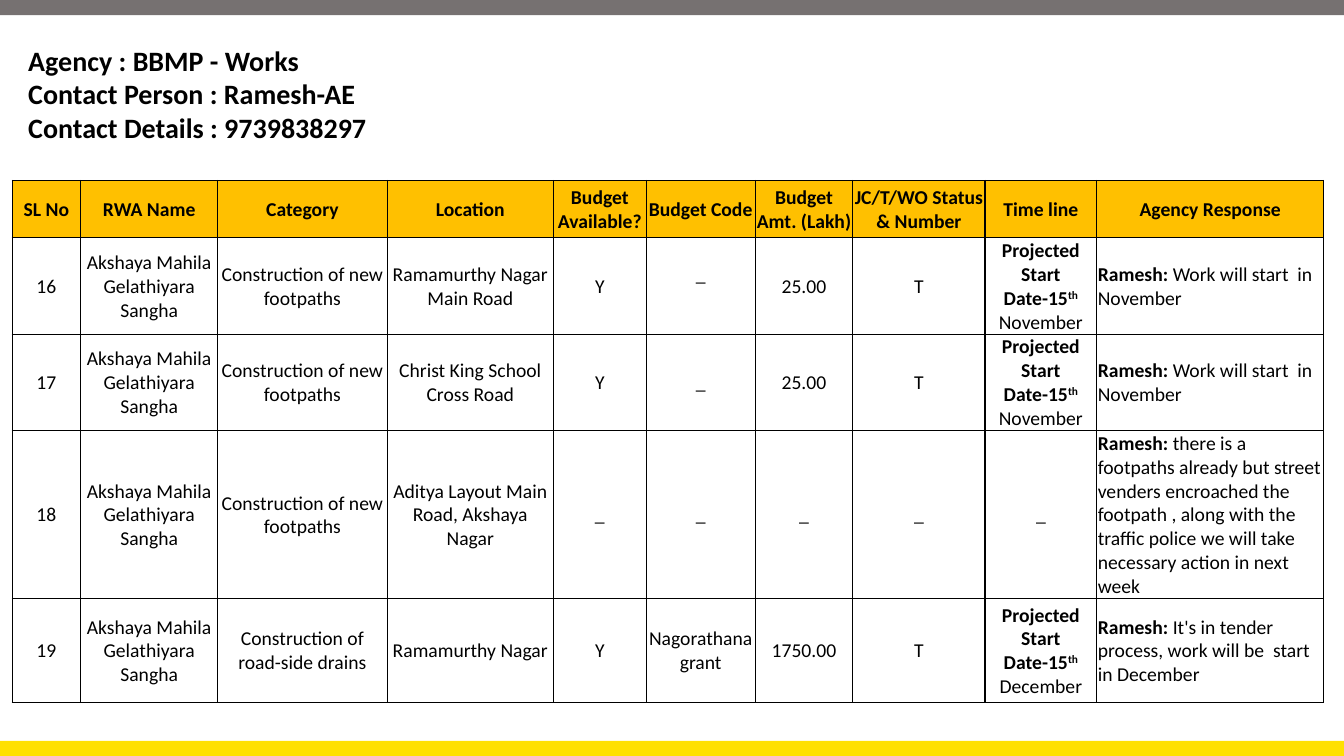
from dataclasses import dataclass

from lxml import etree
from pptx import Presentation
from pptx.dml.color import RGBColor
from pptx.enum.shapes import MSO_SHAPE
from pptx.enum.text import MSO_ANCHOR, MSO_AUTO_SIZE, PP_ALIGN
from pptx.oxml.ns import qn
from pptx.util import Inches, Pt

RECTANGLE = MSO_SHAPE.RECTANGLE
TOP, MIDDLE = MSO_ANCHOR.TOP, MSO_ANCHOR.MIDDLE
LEFT, CENTER = PP_ALIGN.LEFT, PP_ALIGN.CENTER
NO_AUTOFIT = MSO_AUTO_SIZE.NONE
PLAIN, BOLD, RAISED = "plain", "bold", "raised"


@dataclass(frozen=True)
class Theme:
    font: str = "Calibri"
    ink: str = "000000"
    header: str = "FFC000"
    top_bar: str = "767171"
    bottom_bar: str = "FFE000"
    title_size: int = 20
    table_size: int = 14
    border: float = 1


THEME = Theme()


def projected_start(month):
    return [("Projected Start Date-15", BOLD), ("th ", RAISED), (month, PLAIN)]


def response(words):
    return [("Ramesh: ", BOLD), (words, PLAIN)]


TITLE = ["Agency : BBMP - Works", "Contact Person : Ramesh-AE",
         "Contact Details : 9739838297"]
HEADERS = ["SL No", "RWA Name", "Category", "Location", "Budget Available?",
           "Budget Code", "Budget Amt. (Lakh)", "JC/T/WO Status & Number",
           "Time line", "Agency Response"]
ASSOCIATION = "Akshaya Mahila Gelathiyara Sangha"
FOOTPATHS = "Construction of new footpaths"
WORKS = [
    ["16", ASSOCIATION, FOOTPATHS, "Ramamurthy Nagar Main Road", "Y", "_",
     "25.00", "T", projected_start("November"),
     response("Work will start  in November")],
    ["17", ASSOCIATION, FOOTPATHS, "Christ King School Cross Road", "Y", "_",
     "25.00", "T", projected_start("November"),
     response("Work will start  in November")],
    ["18", ASSOCIATION, FOOTPATHS, "Aditya Layout Main Road, Akshaya Nagar",
     "_", "_", "_", "_", "_",
     response("there is a footpaths already but street venders encroached the "
              "footpath , along with the traffic police we will take "
              "necessary action in next week")],
    ["19", ASSOCIATION, "Construction of road-side drains",
     "Ramamurthy Nagar", "Y", "Nagorathana grant", "1750.00", "T",
     projected_start("December"),
     response("It's in tender process, work will be  start in December")],
]

PAGE_WIDTH, PAGE_HEIGHT, BAR_HEIGHT = 13.33, 7.5, 0.15
COLUMN_WIDTHS = [0.68, 1.36, 1.68, 1.65, 0.92, 1.08, 0.97, 1.31, 1.11, 2.25]
ROW_HEIGHTS = [0.57, 0.93, 0.82, 1.52, 1.03]
RESPONSE_COLUMN = len(HEADERS) - 1
RAISED_DASH = (1, 5)


def style(span, size, bold):
    font = span.font
    font.name, font.size, font.bold = THEME.font, Pt(size), bold
    font.color.rgb = RGBColor.from_string(THEME.ink)


def add_bar(page, top, color):
    bar = page.shapes.add_shape(RECTANGLE, 0, Inches(top),
                                Inches(PAGE_WIDTH), Inches(BAR_HEIGHT))
    bar.shadow.inherit = False
    bar.fill.solid()
    bar.fill.fore_color.rgb = RGBColor.from_string(color)
    bar.line.fill.background()


def fill_title(title):
    title.left, title.top = Inches(0.18), Inches(0.38)
    title.width, title.height = Inches(12.95), Inches(1.11)
    frame = title.text_frame
    frame.text = "\n".join(TITLE)
    frame.word_wrap = True
    frame.auto_size = NO_AUTOFIT
    frame.vertical_anchor = TOP
    for para in frame.paragraphs:
        para.alignment = LEFT
        para.line_spacing = 1.0
        para.space_before = Pt(0)
        style(para.runs[0], THEME.title_size, True)


def add_borders(cell):
    properties = cell._tc.get_or_add_tcPr()
    for side in ("a:lnL", "a:lnR", "a:lnT", "a:lnB"):
        line = etree.SubElement(properties, qn(side), w=str(Pt(THEME.border)))
        fill = etree.SubElement(line, qn("a:solidFill"))
        etree.SubElement(fill, qn("a:srgbClr"), val=THEME.ink)


def fill_cell(cell, content, is_header, alignment):
    """Write a string, or a list of (text, style) spans, into a cell."""
    add_borders(cell)
    if is_header:
        cell.fill.solid()
        cell.fill.fore_color.rgb = RGBColor.from_string(THEME.header)
    else:
        cell.fill.background()
    cell.margin_left = cell.margin_right = cell.margin_top = Inches(0.01)
    cell.margin_bottom = 0
    cell.vertical_anchor = MIDDLE
    para = cell.text_frame.paragraphs[0]
    para.alignment = alignment
    if isinstance(content, str):
        content = [(content, BOLD if is_header else PLAIN)]
    for text, look in content:
        span = para.add_run()
        span.text = text
        style(span, THEME.table_size, look != PLAIN)
        if look == RAISED:
            span._r.get_or_add_rPr().set("baseline", "30000")


def add_works_table(page):
    rows = [HEADERS] + WORKS
    frame = page.shapes.add_table(
        len(rows), len(HEADERS), Inches(0.12), Inches(1.79),
        Inches(sum(COLUMN_WIDTHS)), Inches(sum(ROW_HEIGHTS)))
    table = frame.table
    table.first_row = table.horz_banding = False
    for column, width in zip(table.columns, COLUMN_WIDTHS):
        column.width = Inches(width)
    for row, height in zip(table.rows, ROW_HEIGHTS):
        row.height = Inches(height)
    for r, contents in enumerate(rows):
        for c, content in enumerate(contents):
            is_header = r == 0
            is_response = c == RESPONSE_COLUMN and not is_header
            fill_cell(table.cell(r, c), content, is_header,
                      LEFT if is_response else CENTER)
    table.cell(*RAISED_DASH).margin_bottom = Inches(0.24)


def main():
    deck = Presentation()
    deck.slide_width, deck.slide_height = Inches(PAGE_WIDTH), Inches(PAGE_HEIGHT)
    title_only = deck.slide_layouts[5]
    page = deck.slides.add_slide(title_only)
    add_bar(page, PAGE_HEIGHT - BAR_HEIGHT, THEME.bottom_bar)
    add_bar(page, 0, THEME.top_bar)
    add_works_table(page)
    fill_title(page.shapes.title)
    deck.save("out.pptx")


if __name__ == "__main__":
    main()
